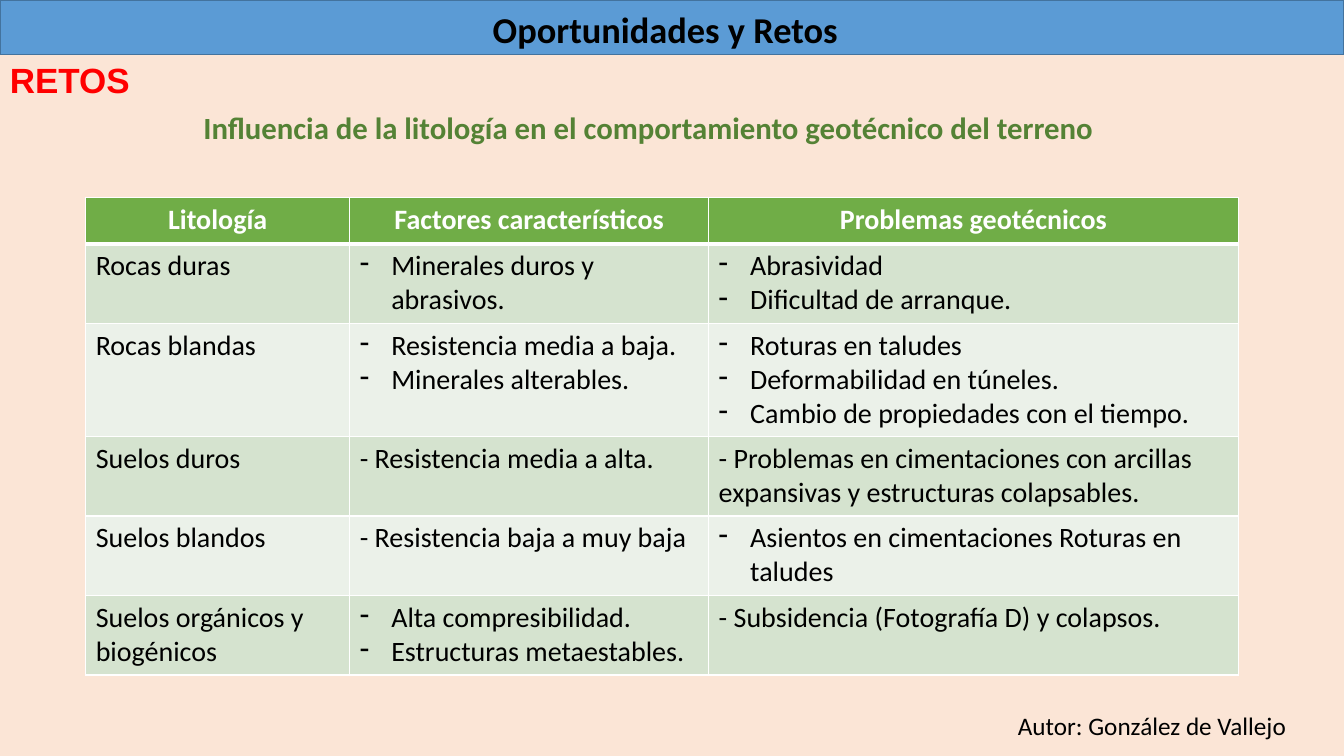
"""Builds a slide on how lithology affects the geotechnical behaviour of the ground."""
from lxml.etree import SubElement
from pptx import Presentation
from pptx.dml.color import RGBColor
from pptx.enum.shapes import MSO_SHAPE as Shape
from pptx.enum.text import MSO_AUTO_SIZE as Fit, PP_ALIGN as Align
from pptx.oxml.ns import qn
from pptx.util import Pt

LABELS = [
    dict(box=(0, 38.2, 101, 37.4), text="RETOS", size=25, face="Arial",
         colour="FF0000", bold=True, wrap=False),
    dict(box=(138.2, 74.2, 669.6, 33.8), size=22, colour="548235", bold=True,
         text="Influencia de la litología en el comportamiento geotécnico del terreno"),
    dict(box=(720, 504, 240, 51), text="Autor: González de Vallejo", size=18,
         align=Align.JUSTIFY),
    dict(box=(344.9, 1.4, 264.2, 38.9), text="Oportunidades y Retos", size=26,
         bold=True, wrap=False),
]
HEADERS = ["Litología", "Factores característicos", "Problemas geotécnicos"]
# A list is bulleted, a string is a plain paragraph.
ROWS = [
    ["Rocas duras", ["Minerales duros y abrasivos."],
     ["Abrasividad", "Dificultad de arranque."]],
    ["Rocas blandas", ["Resistencia media a baja.", "Minerales alterables."],
     ["Roturas en taludes", "Deformabilidad en túneles.",
      "Cambio de propiedades con el tiempo."]],
    ["Suelos duros", "- Resistencia media a alta.",
     "- Problemas en cimentaciones con arcillas expansivas y estructuras colapsables."],
    ["Suelos blandos", "- Resistencia baja a muy baja",
     ["Asientos en cimentaciones Roturas en taludes"]],
    ["Suelos orgánicos y biogénicos",
     ["Alta compresibilidad.", "Estructuras metaestables."],
     "- Subsidencia (Fotografía D) y colapsos."],
]
TABLE_LEFT, TABLE_TOP = 61.2, 141.1
COLUMN_WIDTHS = [188.6, 256.4, 378.3]
ROW_HEIGHTS = [33.1, 56.8, 80.8, 56.8, 56.8, 56.8]
HEADER_FILL, BAND_FILLS = "70AD47", ["D5E3CF", "EBF1E9"]
BULLET_INDENT = 22.5


def paint(target, colour):
    target.solid()
    target.fore_color.rgb = RGBColor.from_string(colour)


def write(para, text, size=20, face="Calibri", colour="000000", bold=False,
          align=Align.LEFT, bullet=False):
    span = para.add_run()
    span.text = text
    span.font.size, span.font.name, span.font.bold = Pt(size), face, bold
    paint(span.font.fill, colour)
    para.alignment = align
    if bullet:
        properties = para._p.get_or_add_pPr()
        properties.set("marL", str(Pt(BULLET_INDENT)))
        properties.set("indent", str(-Pt(BULLET_INDENT)))
        SubElement(properties, qn("a:buChar"), char="-")


def add_label(page, box, text, wrap=True, **style):
    frame = page.shapes.add_textbox(*map(Pt, box)).text_frame
    frame.word_wrap, frame.auto_size = wrap, Fit.SHAPE_TO_FIT_TEXT
    write(frame.paragraphs[0], text, **style)


def add_borders(cell, bottom=1, top=1):
    properties = cell._tc.get_or_add_tcPr()
    for side, width in zip("LRTB", (1, 1, top, bottom)):
        line = SubElement(properties, qn(f"a:ln{side}"), w=str(Pt(width)))
        SubElement(SubElement(line, qn("a:solidFill")), qn("a:srgbClr"), val="FFFFFF")


def fill_cell(cell, content, fill, top=1, bottom=1, **style):
    add_borders(cell, bottom, top)
    paint(cell.fill, fill)
    bullet = isinstance(content, list)
    frame = cell.text_frame
    for index, text in enumerate(content if bullet else [content]):
        para = frame.add_paragraph() if index else frame.paragraphs[0]
        write(para, text, bullet=bullet, **style)


def add_lithology_table(page):
    table = page.shapes.add_table(
        len(ROW_HEIGHTS), len(COLUMN_WIDTHS), Pt(TABLE_LEFT), Pt(TABLE_TOP),
        Pt(sum(COLUMN_WIDTHS)), Pt(sum(ROW_HEIGHTS))).table
    for column, width in zip(table.columns, COLUMN_WIDTHS):
        column.width = Pt(width)
    for row, height in zip(table.rows, ROW_HEIGHTS):
        row.height = Pt(height)
    for column, header in enumerate(HEADERS):
        fill_cell(table.cell(0, column), header, HEADER_FILL, bottom=3,
                  colour="FFFFFF", bold=True, align=Align.CENTER)
    for index, contents in enumerate(ROWS):
        for column, content in enumerate(contents):
            fill_cell(table.cell(index + 1, column), content, BAND_FILLS[index % 2],
                      top=1 if index else 3)


def main():
    deck = Presentation()
    deck.slide_width, deck.slide_height = Pt(960), Pt(540)
    page = deck.slides.add_slide(deck.slide_layouts[6])
    paint(page.background.fill, "FBE5D6")
    banner = page.shapes.add_shape(Shape.RECTANGLE, 0, 0, Pt(960), Pt(38.9))
    banner.shadow.inherit = False
    paint(banner.fill, "5B9BD5")
    paint(banner.line.fill, "43739E")
    banner.line.width = Pt(1)
    add_lithology_table(page)
    for label in LABELS:
        add_label(page, **label)
    deck.save("out.pptx")


if __name__ == "__main__":
    main()
